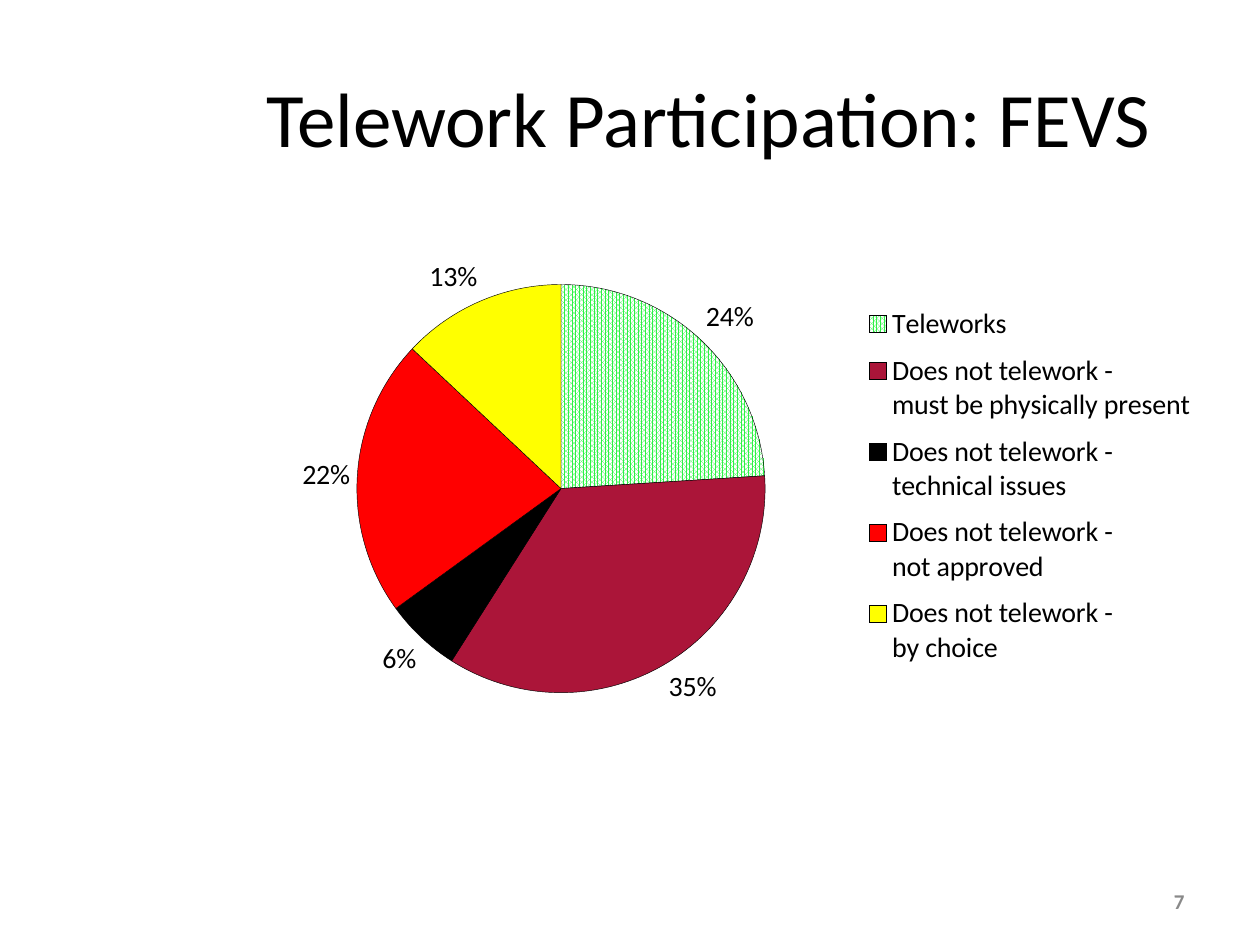
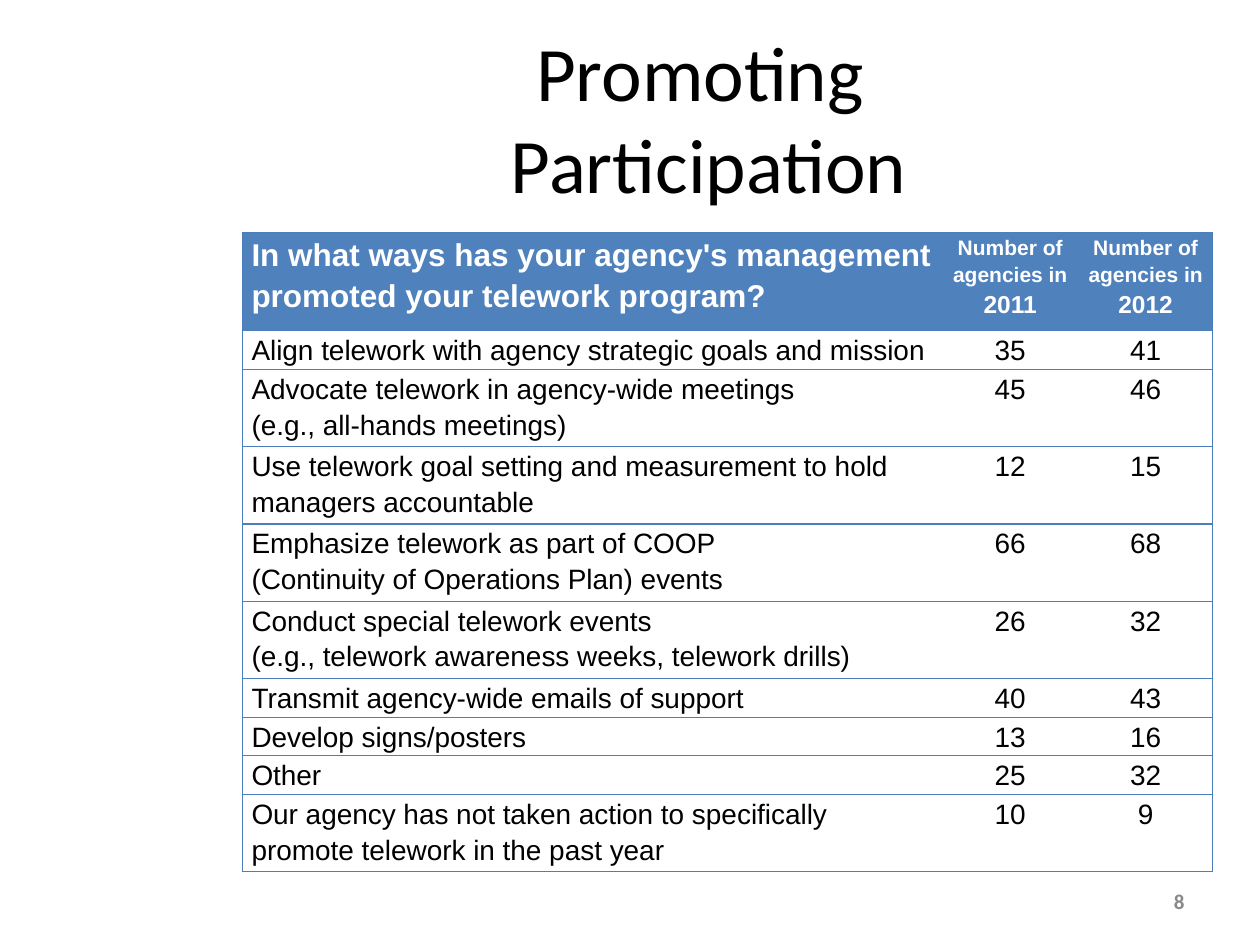
from lxml import etree
from pptx import Presentation
from pptx import util as u
from pptx.chart.data import CategoryChartData
from pptx.dml.color import RGBColor
from pptx.enum import chart as ch, dml, text
from pptx.oxml import ns

BLACK, WHITE, GREY = "000000", "FFFFFF", "898989"
HEADER_BLUE, RULE_BLUE = "4F81BD", "4B7EBC"
CENTER, LEFT, RIGHT = text.PP_ALIGN.CENTER, text.PP_ALIGN.LEFT, text.PP_ALIGN.RIGHT


def color(value):
    return RGBColor.from_string(value)


def add_text(paragraph, content, size, ink, face="Calibri", bold=False):
    """Add one run per line of content, with line breaks between them."""
    for number, line in enumerate(content.split("\n")):
        if number:
            paragraph.add_line_break()
        run = paragraph.add_run()
        run.text = line
        run.font.name, run.font.size, run.font.bold = face, u.Pt(size), bold
        run.font.color.rgb = color(ink)


prs = Presentation()
prs.slide_width, prs.slide_height = u.Cm(25.4), u.Cm(19.05)

# Title and page number, alike on both slides
slides = []
for page, heading in ((7, "Telework Participation: FEVS"), (8, "Promoting \nParticipation")):
    slide = prs.slides.add_slide(prs.slide_layouts[5])
    title = slide.shapes.title
    title.left, title.top, title.width, title.height = u.Cm(4.45), u.Cm(0.76), u.Cm(19.68), u.Cm(3.18)
    title.text_frame.vertical_anchor = text.MSO_ANCHOR.MIDDLE
    title.text_frame.paragraphs[0].alignment = CENTER
    add_text(title.text_frame.paragraphs[0], heading, 44, BLACK)

    footer = slide.shapes.add_textbox(u.Cm(20.12), u.Cm(17.65), u.Cm(4.01), u.Cm(1.02)).text_frame
    footer.word_wrap = True
    footer.vertical_anchor = text.MSO_ANCHOR.MIDDLE
    footer.paragraphs[0].alignment = RIGHT
    add_text(footer.paragraphs[0], str(page), 12, GREY, bold=True)
    slides.append(slide)
participation, promotion = slides

# Participation pie
shares = [
    ("Teleworks", 0.24, "2EF245"),
    ("Does not telework - \nmust be physically present", 0.35, "AB1539"),
    ("Does not telework - \ntechnical issues", 0.06, "000000"),
    ("Does not telework - \nnot approved", 0.22, "FF0000"),
    ("Does not telework - \nby choice", 0.13, "FFFF00"),
]
data = CategoryChartData(number_format="0%")
data.categories = [answer for answer, share, hue in shares]
data.add_series("Series 1", [share for answer, share, hue in shares])
pie = participation.shapes.add_chart(
    ch.XL_CHART_TYPE.PIE, u.Cm(3.96), u.Cm(4.72), u.Cm(21), u.Cm(10.16), data).chart
pie.has_title = False
pie.font.name, pie.font.size = "Calibri", u.Pt(10)
pie.font.color.rgb = color(BLACK)
pie.has_legend = True
pie.legend.position = ch.XL_LEGEND_POSITION.RIGHT
pie.legend.include_in_layout = False
pie.legend.font.size = u.Pt(16)

plot = pie.plots[0]
plot.vary_by_categories = True
plot.has_data_labels = True
labels = plot.data_labels
labels.show_value, labels.show_percentage = True, False
labels.position = ch.XL_LABEL_POSITION.OUTSIDE_END
labels.number_format, labels.number_format_is_linked = "0%", False
labels.font.size = u.Pt(16)

for index, (answer, share, hue) in enumerate(shares):
    wedge = plot.series[0].points[index].format
    if index == 0:
        wedge.fill.patterned()
        wedge.fill.pattern = dml.MSO_PATTERN.PERCENT_80
        wedge.fill.fore_color.rgb, wedge.fill.back_color.rgb = color(hue), color(WHITE)
    else:
        wedge.fill.solid()
        wedge.fill.fore_color.rgb = color(hue)
    wedge.line.color.rgb = color(BLACK)
    wedge.line.width = u.Pt(0.25)

# Fixed places for the pie and its legend, as fractions of the chart area
chart_part = pie._chartSpace.chart
edges = [("xMode", "edge"), ("yMode", "edge")]
places = [
    (chart_part.plotArea, 0, [("layoutTarget", "inner")], (0.15, 0.1, 0.4, 0.81)),
    (chart_part.find(ns.qn("c:legend")), 1, [], (0.64, 0.12, 0.32, 0.76)),
]
for holder, position, target, box in places:
    for old in holder.findall(ns.qn("c:layout")):
        holder.remove(old)
    layout = etree.Element(ns.qn("c:layout"))
    manual = etree.SubElement(layout, ns.qn("c:manualLayout"))
    for tag, value in target + edges + list(zip("xywh", box)):
        etree.SubElement(manual, ns.qn("c:" + tag)).set("val", str(value))
    holder.insert(position, layout)

# Promotion table: answer, agencies in 2011, agencies in 2012
ways = [
    ("Align telework with agency strategic goals and mission", 35, 41),
    ("Advocate telework in agency-wide meetings \n(e.g., all-hands meetings)", 45, 46),
    ("Use telework goal setting and measurement to hold managers accountable", 12, 15),
    ("Emphasize telework as part of COOP \n(Continuity of Operations Plan) events", 66, 68),
    ("Conduct special telework events \n(e.g., telework awareness weeks, telework drills)", 26, 32),
    ("Transmit agency-wide emails of support", 40, 43),
    ("Develop signs/posters", 13, 16),
    ("Other", 25, 32),
    ("Our agency has not taken action to specifically \npromote telework in the past year", 10, 9),
]
header = [
    [("In what ways has your agency's management promoted your telework program?", 18)],
    [("Number of agencies in ", 12), ("2011", 14)],
    [("Number of agencies in ", 12), ("2012", 14)],
]
rows = [header] + [[[(str(entry), 16)] for entry in way] for way in ways]
one_line, two_lines = 0.78, 1.55
heights = [1.98] + [two_lines if len(way[0]) > 54 else one_line for way in ways]
widths = [14.1, 2.77, 2.69]

table = promotion.shapes.add_table(
    len(rows), len(widths), u.Cm(4.88), u.Cm(4.69), u.Cm(sum(widths)), u.Cm(sum(heights))).table
table.horz_banding = False
for column, width in zip(table.columns, widths):
    column.width = u.Cm(width)
for r, (row, height) in enumerate(zip(rows, heights)):
    table.rows[r].height = u.Cm(height)
    for c, parts in enumerate(row):
        cell = table.cell(r, c)
        cell.margin_left = cell.margin_right = u.Cm(0.19)
        cell.margin_top = cell.margin_bottom = 0
        paragraph = cell.text_frame.paragraphs[0]
        paragraph.alignment = CENTER if c else LEFT
        paragraph.line_spacing = 1.15
        for content, size in parts:
            add_text(paragraph, content, size, BLACK if r else WHITE, "Arial", bold=r == 0)

        properties = cell._tc.get_or_add_tcPr()
        ruled = {"lnL": c == 0, "lnR": c == len(widths) - 1, "lnT": True, "lnB": True}
        for side, visible in ruled.items():
            border = etree.SubElement(properties, ns.qn("a:" + side), w=str(u.Pt(0.75)))
            if visible:
                paint = etree.SubElement(border, ns.qn("a:solidFill"))
                etree.SubElement(paint, ns.qn("a:srgbClr"), val=RULE_BLUE)
            else:
                etree.SubElement(border, ns.qn("a:noFill"))
        if r:
            cell.fill.background()
        else:
            cell.fill.solid()
            cell.fill.fore_color.rgb = color(HEADER_BLUE)

prs.save("out.pptx")
